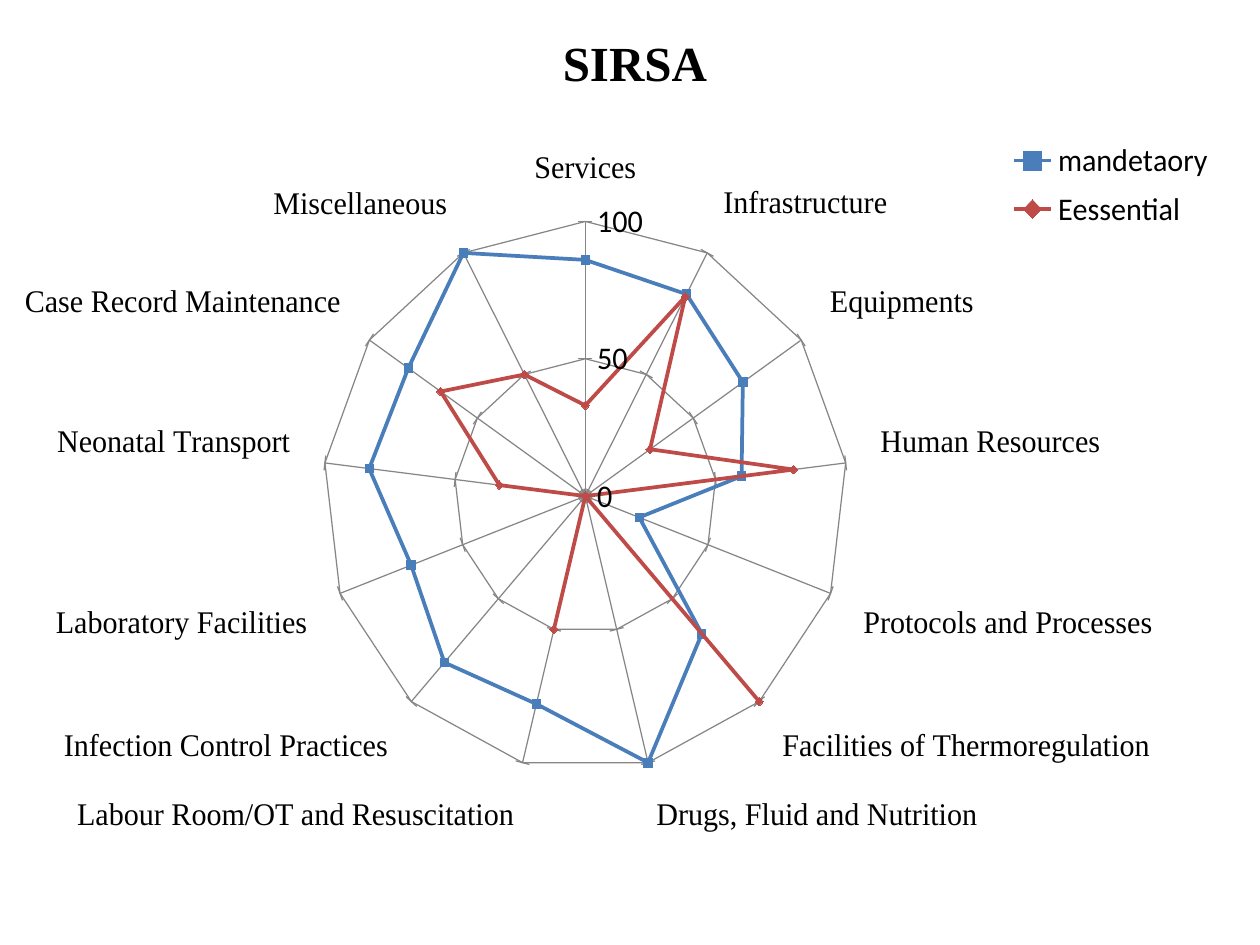
from lxml import etree
from pptx import Presentation
from pptx.chart.data import CategoryChartData
from pptx.dml.color import RGBColor
from pptx.enum.chart import XL_CHART_TYPE as ChartType, XL_LEGEND_POSITION as LegendPosition
from pptx.enum.chart import XL_MARKER_STYLE as Marker, XL_TICK_MARK as Tick
from pptx.enum.text import MSO_ANCHOR as Anchor, PP_ALIGN as Align
from pptx.oxml.ns import qn
from pptx.util import Cm, Pt

BLACK = RGBColor(0x00, 0x00, 0x00)
GREY = RGBColor(0x86, 0x86, 0x86)
BLUE = RGBColor(0x4F, 0x81, 0xBD)
BLUE_LINE = RGBColor(0x4A, 0x7E, 0xBB)
RED = RGBColor(0xC0, 0x50, 0x4D)
RED_LINE = RGBColor(0xBE, 0x4B, 0x48)

SCORES = [
    ("Services", 86, 33),
    ("Infrastructure", 83, 82),
    ("Equipments", 73, 30),
    ("Human Resources", 60, 80),
    ("Protocols and Processes", 22, 0),
    ("Facilities of Thermoregulation", 67, 100),
    ("Drugs, Fluid and Nutrition", 100, 0),
    ("Labour Room/OT and Resuscitation", 78, 50),
    ("Infection Control Practices", 81, 0),
    ("Laboratory Facilities", 71, 0),
    ("Neonatal Transport", 83, 33),
    ("Case Record Maintenance", 82, 67),
    ("Miscellaneous", 100, 50),
]


def place(parent, index, x, y, w, h, inner=False):
    for old in parent.findall(qn("c:layout")):
        parent.remove(old)
    layout = etree.Element(qn("c:layout"))
    manual = etree.SubElement(layout, qn("c:manualLayout"))
    settings = [("layoutTarget", "inner")] if inner else []
    settings += [("xMode", "edge"), ("yMode", "edge"), ("x", x), ("y", y), ("w", w), ("h", h)]
    for tag, value in settings:
        etree.SubElement(manual, qn("c:" + tag)).set("val", str(value))
    parent.insert(index, layout)


prs = Presentation()
prs.slide_width, prs.slide_height = Cm(25.4), Cm(19.05)
slide = prs.slides.add_slide(prs.slide_layouts[5])

title = slide.shapes.title
title.left, title.top, title.width, title.height = Cm(6.9), Cm(0.53), Cm(11.4), Cm(1.45)
title_frame = title.text_frame
title_frame.vertical_anchor = Anchor.MIDDLE
title_frame.margin_left = Cm(0.65)
heading = title_frame.paragraphs[0]
heading.alignment = Align.CENTER
district = heading.add_run()
district.text = "SIRSA"
district.font.name = "Times New Roman"
district.font.size = Pt(28)
district.font.bold = True
district.font.color.rgb = BLACK

facility_scores = CategoryChartData(number_format="0")
facilities, mandatory, essential = zip(*SCORES)
facility_scores.categories = facilities
facility_scores.add_series("mandetaory", mandatory)
facility_scores.add_series("Eessential", essential)

radar = slide.shapes.add_chart(
    ChartType.RADAR_MARKERS, Cm(0.5), Cm(2.34), Cm(24.2), Cm(15.4), facility_scores
).chart
radar.has_title = False
radar.font.name = "Calibri"
radar.font.size = Pt(18)
radar.font.color.rgb = BLACK
radar.plots[0].vary_by_categories = False
place(radar.plots[0]._element.getparent(), 0, 0.213, 0.138, 0.458, 0.719, inner=True)

radar.has_legend = True
radar.legend.position = LegendPosition.RIGHT
radar.legend.include_in_layout = False
place(radar.legend._element, 1, 0.81, 0.02, 0.18, 0.14)

for axis in (radar.category_axis, radar.value_axis):
    axis.has_major_gridlines = True
    axis.major_tick_mark = Tick.CROSS
    for line in (axis.major_gridlines.format.line, axis.format.line):
        line.color.rgb = GREY
        line.width = Pt(0.75)

facility_font = radar.category_axis.tick_labels.font
facility_font.name = "Times New Roman"
facility_font.size = Pt(18)
facility_font.color.rgb = BLACK

score_axis = radar.value_axis
score_axis.minimum_scale, score_axis.maximum_scale, score_axis.major_unit = 0, 100, 50
score_axis.tick_labels.number_format = "0"
score_axis.tick_labels.number_format_is_linked = False

looks = [(BLUE, BLUE_LINE, Marker.SQUARE), (RED, RED_LINE, Marker.DIAMOND)]
for series, (fill, stroke, symbol) in zip(radar.plots[0].series, looks):
    series.format.line.color.rgb = stroke
    series.format.line.width = Pt(2.25)
    series.marker.style = symbol
    series.marker.size = 5
    series.marker.format.fill.solid()
    series.marker.format.fill.fore_color.rgb = fill
    series.marker.format.line.color.rgb = stroke

prs.save("out.pptx")
